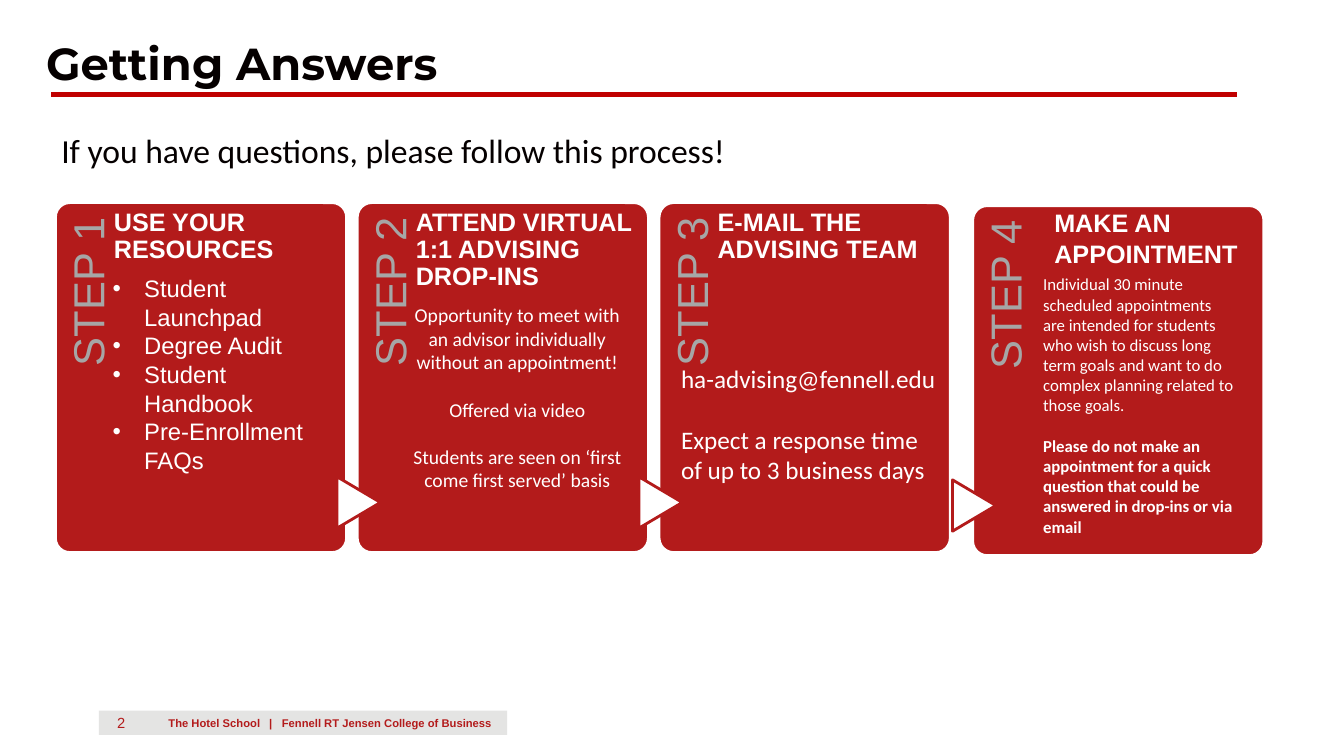
from dataclasses import dataclass

from lxml.etree import SubElement
from pptx import Presentation
from pptx.dml.color import RGBColor
from pptx.enum.shapes import MSO_CONNECTOR as Connector, MSO_SHAPE as Preset
from pptx.enum.text import MSO_ANCHOR as Anchor, PP_ALIGN as Align
from pptx.oxml.ns import qn
from pptx.util import Pt

RED, WHITE, BLACK, GRAY = "B31B1B", "FFFFFF", "050000", "A6A6A6"
CARD_WIDTH, CARD_HEIGHT = 208, 250
CARD_PITCH = 215.6


@dataclass
class Step:
    title: str
    body: list
    body_box: tuple
    size: float
    gap: float = 0
    font: str = "Calibri"
    align: Align = Align.LEFT
    bullets: bool = False
    bold_last: bool = False
    title_offset: tuple = (41.8, 0)
    title_spacing: float = 0.9


STEPS = [
    Step("USE YOUR RESOURCES",
         ["Student Launchpad", "Degree Audit", "Student Handbook", "Pre-Enrollment FAQs"],
         (33.8, 47.5, 165, 151), 17, font="Arial", bullets=True),
    Step("ATTEND VIRTUAL 1:1 ADVISING DROP-INS",
         ["Opportunity to meet with an advisor individually without an appointment!",
          "Offered via video",
          "Students are seen on ‘first come first served’ basis"],
         (25.9, 68.2, 177, 203), 14, gap=17, align=Align.CENTER),
    Step("E-MAIL THE ADVISING TEAM",
         ["ha-advising@fennell.edu", "Expect a response time of up to 3 business days"],
         (8.6, 111, 201.6, 94), 18, gap=22),
    Step("MAKE AN APPOINTMENT",
         ["Individual 30 minute scheduled appointments are intended for students who wish "
          "to discuss long term goals and want to do complex planning related to those goals.",
          "Please do not make an appointment for a quick question that could be answered "
          "in drop-ins or via email"],
         (43.2, 45.4, 150.5, 197), 12, gap=14.6, bold_last=True,
         title_offset=(58.3, -3.6), title_spacing=1),
]


def color(value):
    return RGBColor.from_string(value)


def add_text(slide, box, lines, size, font, fill, bold=False, align=Align.LEFT,
             insets=(7.2, 3.6, 7.2, 3.6), anchor=Anchor.TOP, spacing=1, gap=0):
    text_box = slide.shapes.add_textbox(*map(Pt, box))
    frame = text_box.text_frame
    frame.word_wrap = True
    frame.vertical_anchor = anchor
    frame.margin_left, frame.margin_top, frame.margin_right, frame.margin_bottom = map(Pt, insets)
    frame.text = "\n".join(lines)
    for index, para in enumerate(frame.paragraphs):
        para.alignment = align
        para.line_spacing = spacing
        para.space_before = Pt(gap if index else 0)
        para.font.size = Pt(size)
        para.font.name = font
        para.font.bold = bold
        para.font.color.rgb = color(fill)
    return text_box


def add_shape(slide, preset, box, fill, line=None):
    shape = slide.shapes.add_shape(preset, *map(Pt, box))
    shape.shadow.inherit = False
    shape.fill.solid()
    shape.fill.fore_color.rgb = color(fill)
    if line:
        shape.line.color.rgb = color(line)
        shape.line.width = Pt(2)
    else:
        shape.line.fill.background()
    return shape


def add_bullet(para, indent):
    props = para._p.get_or_add_pPr()
    props.set("marL", str(Pt(indent)))
    props.set("indent", str(Pt(-indent)))
    for tag, name, value in (("a:buFont", "typeface", "Arial"), ("a:buChar", "char", "•")):
        bullet = props.makeelement(qn(tag), {name: value})
        props.find(qn("a:defRPr")).addprevious(bullet)


def add_tabs(para, stops):
    props = para._p.get_or_add_pPr()
    tabs = props.makeelement(qn("a:tabLst"), {})
    props.find(qn("a:defRPr")).addprevious(tabs)
    for stop in stops:
        tab = SubElement(tabs, qn("a:tab"))
        tab.set("pos", str(Pt(stop)))
        tab.set("algn", "l")


def add_header(slide, left, top, width):
    add_text(slide, (left, top, width, 46), ["Getting Answers"], 32, "Montserrat", BLACK, bold=True)
    rule = slide.shapes.add_connector(
        Connector.STRAIGHT, Pt(left + 10.8), Pt(top + 46), Pt(left + 858), Pt(top + 46))
    rule.line.color.rgb = color("C00000")
    rule.line.width = Pt(3.5)
    SubElement(rule._element.spPr, qn("a:effectLst"))
    add_text(slide, (left + 10.8, top + 67.7, 685, 36),
             ["If you have questions, please follow this process!"], 24, "Calibri", BLACK)


def add_card(slide, left, top, number, step):
    card = add_shape(slide, Preset.ROUNDED_RECTANGLE,
                     (left, top, CARD_WIDTH, CARD_HEIGHT), RED, WHITE)
    card.adjustments[0] = 0.05
    label = add_text(slide, (left - 82, top + 81.4, 205, 41.8), [f"STEP {number}"], 31, "Arial",
                     GRAY, align=Align.RIGHT, insets=(0, 8.6, 10.8, 0), spacing=0.9)
    label.rotation = 270
    if number > 1:
        arrow = add_shape(slide, Preset.FLOWCHART_EXTRACT,
                          (left - 17.3, top + 198.7, 36.7, 31), WHITE, RED)
        arrow.rotation = 90
    right, down = step.title_offset
    add_text(slide, (left + right, top + down, 155.5, 70), [step.title], 18, "Arial", WHITE,
             bold=True, insets=(0, 5, 0, 0), spacing=step.title_spacing)
    right, down, width, height = step.body_box
    body = add_text(slide, (left + right, top + down, width, height), step.body, step.size,
                    step.font, WHITE, align=step.align, gap=step.gap)
    paras = body.text_frame.paragraphs
    if step.bullets:
        for para in paras:
            add_bullet(para, 22.5)
    if step.bold_last:
        paras[-1].font.bold = True


def add_footer(slide, left, top, height):
    add_shape(slide, Preset.RECTANGLE, (left, top, 291.6, height), "E4E4E3")
    insets = (0, 3.6, 0, 3.6)
    add_text(slide, (left + 13, top - 1.4, 36.7, 20), ["2"], 10.5, "Arial", RED,
             insets=insets, anchor=Anchor.BOTTOM)
    label = add_text(slide, (left + 49.7, top, 672, height),
                     ["The Hotel School\t|\tFennell RT Jensen College of Business"],
                     8, "Arial", RED, bold=True, insets=insets, anchor=Anchor.BOTTOM)
    add_tabs(label.text_frame.paragraphs[0], (72, 81))


def main():
    deck = Presentation()
    deck.slide_width, deck.slide_height = Pt(960), Pt(540)
    slide = deck.slides.add_slide(deck.slide_layouts[6])
    add_footer(slide, 70.6, 507.6, 17.3)
    for index, step in enumerate(STEPS):
        last = index == len(STEPS) - 1
        left = 694.8 if last else 39.6 + index * CARD_PITCH
        add_card(slide, left, 146.9 if last else 144.7, index + 1, step)
    add_header(slide, 25.9, 21.6, 880)
    deck.save("out.pptx")


if __name__ == "__main__":
    main()
